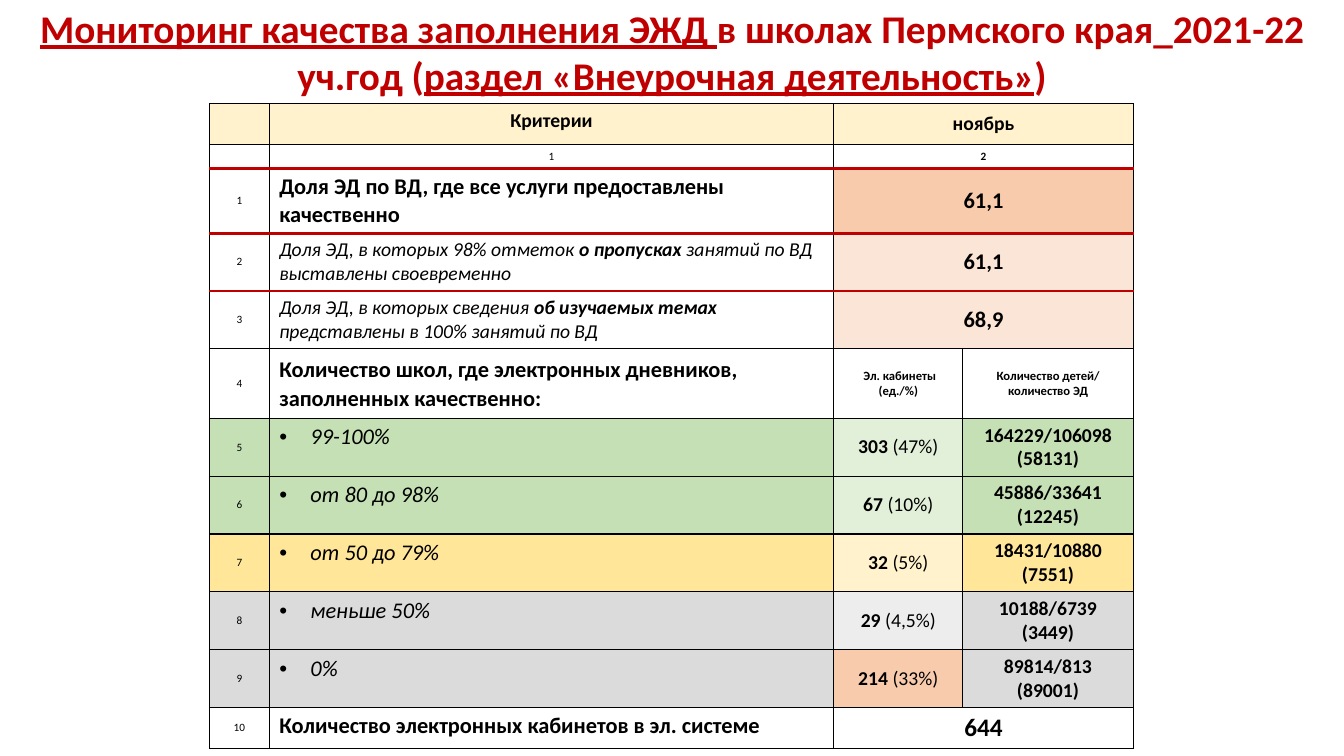
import pptx
import pptx.dml.color
import pptx.enum.text
import pptx.oxml.ns
import pptx.util
from lxml import etree
from pptx.util import Inches

ALIGN = pptx.enum.text.PP_ALIGN
ANCHOR = pptx.enum.text.MSO_ANCHOR
qn = pptx.oxml.ns.qn


def color(value):
    return pptx.dml.color.RGBColor.from_string(value)


def write(paragraph, text, formats):
    """Add text to a paragraph; parts between asterisks take the marked format."""
    for position, part in enumerate(text.split("*")):
        if part:
            run = paragraph.add_run()
            run.text = part
            run.font.name = "Calibri"
            run.font.color.rgb = color(formats.get("color", "000000"))
            values = {"size": pptx.util.Pt(formats["size"]),
                      "bold": formats.get("bold", False),
                      "italic": formats.get("italic", False)}
            if position % 2:
                values[formats.get("marked", "bold")] = True
            for name, value in values.items():
                setattr(run.font, name, value)


presentation = pptx.Presentation()
presentation.slide_width = Inches(13.33)
presentation.slide_height = Inches(7.5)
slide = presentation.slides.add_slide(presentation.slide_layouts[6])

# Text formats
NUMBER = {"size": 8, "align": ALIGN.CENTER, "anchor": ANCHOR.MIDDLE}
MONTH_NUMBER = {**NUMBER, "bold": True, "margin": 0}
HEADING = {"size": 14, "bold": True, "align": ALIGN.CENTER}
MONTH = {**HEADING, "anchor": ANCHOR.MIDDLE}
SHARE = {**MONTH, "size": 16}
TOTAL = {**MONTH, "size": 18}
SUBHEADING = {**MONTH, "size": 9}
SCHOOLS = {**MONTH, "bold": False}
CRITERION = {"size": 16, "bold": True}
SPACED = {**CRITERION, "spacing": 1.07}
DETAIL = {"size": 14, "italic": True}
RANGE = {"size": 16, "italic": True, "bullet": True}

# Rows: height, then text, format and fill of each cell
rows = [
    (0.4, ("", NUMBER, "FFF2CC"), ("Критерии", HEADING, "FFF2CC"), ("ноябрь", MONTH, "FFF2CC")),
    (0.24, ("", NUMBER, None), ("1", NUMBER, None), ("2", MONTH_NUMBER, None)),
    (0.64, ("1", NUMBER, None),
     ("Доля ЭД по ВД, где все услуги предоставлены качественно", CRITERION, None),
     ("61,1", SHARE, "F8CBAD")),
    (0.57, ("2", NUMBER, None),
     ("Доля ЭД, в которых 98% отметок *о пропусках *занятий по ВД выставлены своевременно",
      DETAIL, None),
     ("61,1", SHARE, "FBE5D6")),
    (0.57, ("3", NUMBER, None),
     ("Доля ЭД, в которых сведения *об изучаемых темах* представлены в 100% занятий по ВД",
      DETAIL, None),
     ("68,9", SHARE, "FBE5D6")),
    (0.69, ("4", NUMBER, None),
     ("Количество школ, где электронных дневников, заполненных качественно:", SPACED, None),
     (" Эл. кабинеты (ед./%)", SUBHEADING, None),
     ("Количество детей/\nколичество ЭД", SUBHEADING, None)),
]
school_groups = [
    ("99-100%", "*303 *(47%)", "164229/106098 (58131)", "C5E0B4", "E2F0D9"),
    ("от 80 до 98%", "*67 *(10%)", "45886/33641\n(12245)", "C5E0B4", "E2F0D9"),
    ("от 50 до 79%", "*32 *(5%)", "18431/10880 (7551)", "FFE699", "FFF2CC"),
    ("меньше 50%", "*29 *(4,5%)", "10188/6739\n(3449)", "DBDBDB", "EDEDED"),
    ("0%", "*214 *(33%)", "89814/813\n(89001)", "DBDBDB", "F8CBAD"),
]
for number, (share, schools, children, dark, light) in enumerate(school_groups, start=5):
    rows.append((0.57, (str(number), NUMBER, dark), (share, RANGE, dark),
                 (schools, SCHOOLS, light), (children, MONTH, dark)))
rows.append((0.4, ("10", NUMBER, None),
             ("Количество электронных кабинетов в эл. системе", CRITERION, None),
             ("644", TOTAL, None)))

# Table
column_widths = [0.59, 5.6, 1.28, 1.69]
table_height = sum(row[0] for row in rows)
table = slide.shapes.add_table(len(rows), len(column_widths), Inches(2.08), Inches(1.03),
                               Inches(sum(column_widths)), Inches(table_height)).table
table.first_row = False
table.horz_banding = False
for column, width in zip(table.columns, column_widths):
    column.width = Inches(width)

RED_LINES = (2, 3, 4)  # rows with a red line above them
for row_index, (height, *cells) in enumerate(rows):
    table.rows[row_index].height = Inches(height)
    if len(cells) == 3:
        table.cell(row_index, 2).merge(table.cell(row_index, 3))
        cells.append(("", NUMBER, cells[2][2]))
    for column_index, (text, formats, fill) in enumerate(cells):
        cell = table.cell(row_index, column_index)
        cell.vertical_anchor = formats.get("anchor", ANCHOR.TOP)
        if "margin" in formats:
            for side in ("left", "top", "right", "bottom"):
                setattr(cell, "margin_" + side, Inches(formats["margin"]))

        # Cell text
        for line_index, line in enumerate(text.split("\n")):
            frame = cell.text_frame
            paragraph = frame.add_paragraph() if line_index else frame.paragraphs[0]
            paragraph.alignment = formats.get("align", ALIGN.LEFT)
            if "spacing" in formats:
                paragraph.line_spacing = formats["spacing"]
            if "bullet" in formats:
                properties = paragraph._p.get_or_add_pPr()
                properties.set("marL", str(Inches(0.31)))
                properties.set("indent", str(Inches(-0.31)))
                etree.SubElement(properties, qn("a:buFont"), typeface="Arial")
                etree.SubElement(properties, qn("a:buChar"), char="•")
            write(paragraph, line, formats)
            if not line:
                etree.SubElement(paragraph._p, qn("a:endParaRPr"), sz="800")

        # Cell borders
        cell_properties = cell._tc.get_or_add_tcPr()
        for tag, is_red in (("a:lnL", False), ("a:lnR", False),
                            ("a:lnT", row_index in RED_LINES),
                            ("a:lnB", row_index + 1 in RED_LINES)):
            width = pptx.util.Pt(2.25 if is_red else 1)
            line = etree.SubElement(cell_properties, qn(tag), w=str(width))
            solid = etree.SubElement(line, qn("a:solidFill"))
            etree.SubElement(solid, qn("a:srgbClr"), val="C00000" if is_red else "000000")

        # Cell fill
        if fill:
            cell.fill.solid()
            cell.fill.fore_color.rgb = color(fill)
        else:
            cell.fill.background()

# Title
title = slide.shapes.add_textbox(Inches(0), Inches(-0.01), Inches(13.33), Inches(1.04))
title.text_frame.word_wrap = True
title_paragraph = title.text_frame.paragraphs[0]
title_paragraph.alignment = ALIGN.CENTER
write(title_paragraph,
      "*Мониторинг качества заполнения ЭЖД *в школах Пермского края_2021-22 уч.год ("
      "*раздел «Внеурочная деятельность»*)",
      {"size": 28, "bold": True, "color": "C00000", "marked": "underline"})

presentation.save("out.pptx")
